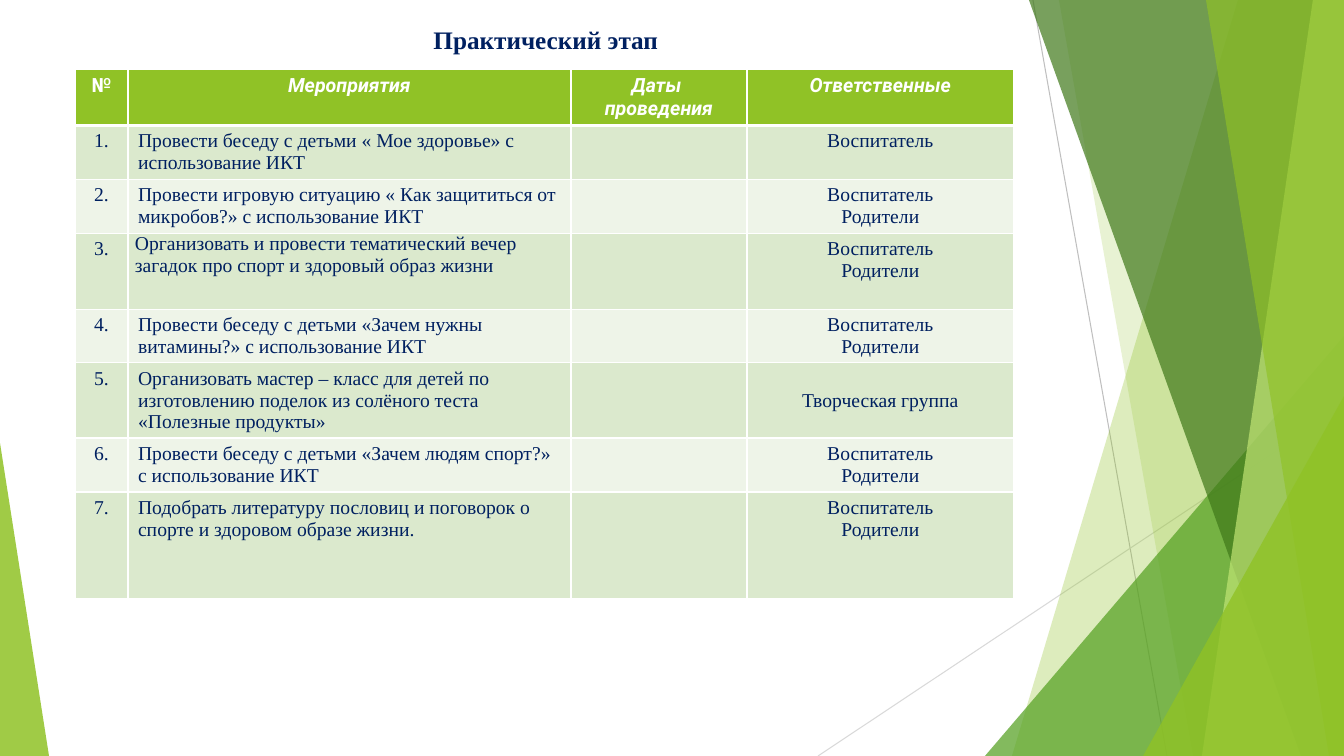
from dataclasses import dataclass

from lxml import etree
from pptx import Presentation
from pptx.dml.color import RGBColor
from pptx.enum.shapes import MSO_CONNECTOR, MSO_SHAPE
from pptx.enum.text import MSO_ANCHOR, PP_ALIGN
from pptx.oxml.ns import qn
from pptx.util import Pt

LEFT, CENTER = PP_ALIGN.LEFT, PP_ALIGN.CENTER
TOP, MIDDLE = MSO_ANCHOR.TOP, MSO_ANCHOR.MIDDLE
TRIANGLE = MSO_SHAPE.ISOSCELES_TRIANGLE
STRAIGHT = MSO_CONNECTOR.STRAIGHT

SCALE = 914400 / 100.8  # EMU in one px
WIDE, HIGH = 1344, 756


@dataclass(frozen=True)
class Theme:
    lime: str = "90C226"
    leaf: str = "54A021"
    dark: str = "3F7819"
    pale: str = "C0E474"
    navy: str = "002060"
    white: str = "FFFFFF"
    bands: tuple = ("DBE9CD", "EEF4E8")
    lines: tuple = ("BFBFBF", "D9D9D9")
    serif: str = "Times New Roman"
    sans: str = "Roboto"
    title: int = 18
    body: int = 14


THEME = Theme()

HEADS = ["№", "Мероприятия", "Даты \nпроведения", "Ответственные"]
BOTH = "Воспитатель\nРодители"
TASKS = [
    ("Провести беседу с детьми « Мое здоровье» с использование ИКТ", "Воспитатель"),
    ("Провести игровую ситуацию « Как защититься от микробов?» с использование ИКТ", BOTH),
    ("Организовать и провести тематический вечер загадок про спорт и здоровый образ жизни", BOTH),
    ("Провести беседу с детьми «Зачем нужны витамины?» с использование ИКТ", BOTH),
    ("Организовать мастер – класс для детей по изготовлению поделок из солёного теста "
     "«Полезные продукты»", "Творческая группа"),
    ("Провести беседу с детьми «Зачем людям спорт?» с использование ИКТ", BOTH),
    ("Подобрать литературу пословиц и поговорок о спорте и здоровом образе жизни.", BOTH),
]
COLS = [53, 443, 176, 267]
ROWS = [55, 54, 54, 76, 53, 75, 54, 107]
TIGHT, MID = 3, 5  # rows with a tight task cell and a centred last cell


def px(n):
    return round(n * SCALE)


def rgb(code):
    return RGBColor.from_string(code)


def write(frame, text, *, size=THEME.body, font=THEME.serif, color=THEME.navy,
          bold=False, italic=False, align=LEFT):
    frame.word_wrap = True
    for i, line in enumerate(text.split("\n")):
        para = frame.paragraphs[0] if i == 0 else frame.add_paragraph()
        para.alignment = align
        run = para.add_run()
        run.text = line
        run.font.size, run.font.name = Pt(size), font
        run.font.bold, run.font.italic = bold, italic
        run.font.color.rgb = rgb(color)


def paint(shape, color, alpha):
    shape.shadow.inherit = False
    shape.line.fill.background()
    shape.fill.solid()
    shape.fill.fore_color.rgb = rgb(color)
    tint = shape.fill._xPr.find(".//" + qn("a:srgbClr"))
    etree.SubElement(tint, qn("a:alpha")).set("val", str(alpha * 1000))


def ray(slide, start, end, color):
    line = slide.shapes.add_connector(STRAIGHT, *map(px, start + end))
    line.line.color.rgb = rgb(color)
    line.line.width = Pt(0.75)
    etree.SubElement(line._element.spPr, qn("a:effectLst"))


def shard(slide, top, foot, color, alpha):
    """Slanted left edge from top to foot, filled up to the right slide edge."""
    form = slide.shapes.build_freeform(top, 0, scale=SCALE)
    form.add_line_segments([(WIDE, 0), (WIDE, HIGH), (foot, HIGH)], close=True)
    paint(form.convert_to_shape(), color, alpha)


def wedge(slide, box, peak, color, alpha):
    shape = slide.shapes.add_shape(TRIANGLE, *map(px, box))
    shape.adjustments[0] = peak
    paint(shape, color, alpha)


def decor(slide, box):
    left, top, wide, high = box
    right, foot = left + wide, top + high
    ray(slide, (left + 1033, top), (left + 1167, foot), THEME.lines[0])
    ray(slide, (right, top + 406), (left + 818, foot), THEME.lines[1])
    shard(slide, 1238, 1012, THEME.lime, 30)
    shard(slide, 1059, 1193, THEME.lime, 20)
    wedge(slide, (right - 359, foot - 420, 359, 420), 1, THEME.leaf, 72)
    shard(slide, 1029, 1301, THEME.dark, 70)
    shard(slide, 1313, 1202, THEME.pale, 70)
    shard(slide, 1206, 1329, THEME.lime, 65)
    wedge(slide, (right - 201, foot - 360, 201, 360), 1, THEME.lime, 80)
    wedge(slide, (left, foot - 313, 49, 313), 0, THEME.lime, 85)


def heading(slide, box):
    title = slide.shapes.title
    title.left, title.top, title.width, title.height = map(px, box)
    title.text_frame.vertical_anchor = TOP
    write(title.text_frame, "Практический этап ", size=THEME.title, bold=True, align=CENTER)
    # Raise the placeholder above the background shapes
    slide.shapes._spTree.append(title._element)


def border(cell, row):
    # The rule under the header row is thicker
    widths = {"L": 1, "R": 1, "T": 3 if row == 1 else 1, "B": 3 if row == 0 else 1}
    for side, width in widths.items():
        edge = etree.SubElement(cell._tc.get_or_add_tcPr(), qn("a:ln" + side))
        edge.set("w", str(Pt(width)))
        fill = etree.SubElement(edge, qn("a:solidFill"))
        etree.SubElement(fill, qn("a:srgbClr")).set("val", THEME.white)


def plan(slide, box):
    data = [HEADS] + [(f"{n}.", task, "", who) for n, (task, who) in enumerate(TASKS, 1)]
    table = slide.shapes.add_table(len(ROWS), len(COLS), *map(px, box)).table
    table.horz_banding = table.first_row = False
    for col, width in zip(table.columns, COLS):
        col.width = px(width)
    for row, height in zip(table.rows, ROWS):
        row.height = px(height)
    for r, texts in enumerate(data):
        for c, text in enumerate(texts):
            cell = table.cell(r, c)
            border(cell, r)
            cell.fill.solid()
            cell.fill.fore_color.rgb = rgb(THEME.bands[(r - 1) % 2] if r else THEME.lime)
            if r == 0:
                write(cell.text_frame, text, font=THEME.sans, color=THEME.white,
                      bold=True, italic=c > 0, align=CENTER)
            elif text:
                write(cell.text_frame, text, align=LEFT if c == 1 else CENTER)
    tight = table.cell(TIGHT, 1)
    tight.margin_left = tight.margin_right = px(7)
    tight.margin_top = tight.margin_bottom = 0
    table.cell(MID, 3).vertical_anchor = MIDDLE


def main():
    deck = Presentation()
    deck.slide_width, deck.slide_height = px(WIDE), px(HIGH)
    slide = deck.slides.add_slide(deck.slide_layouts[5])
    decor(slide, (0, 0, WIDE, HIGH))
    heading(slide, (75, 19, 948, 194))
    plan(slide, (75, 69, sum(COLS), sum(ROWS)))
    deck.save("out.pptx")


if __name__ == "__main__":
    main()
